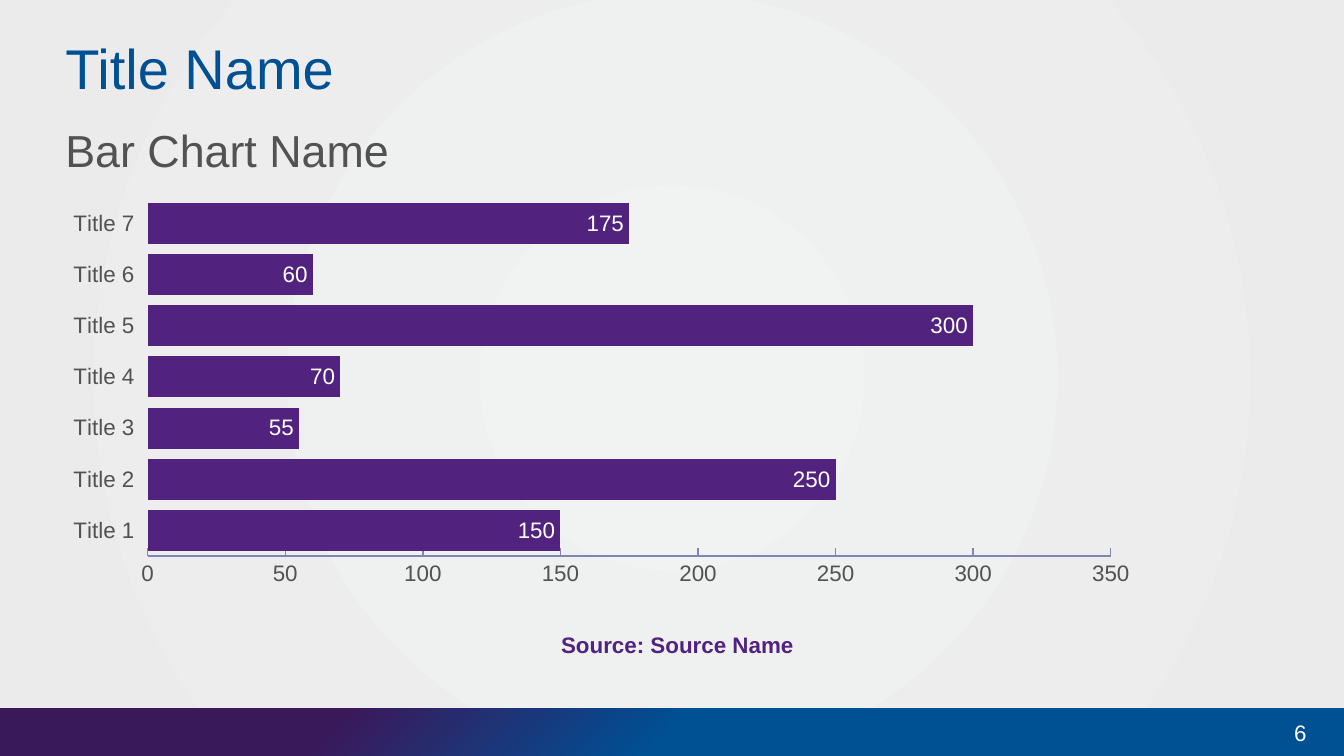
from lxml import etree
from pptx import Presentation
from pptx.chart.data import CategoryChartData
from pptx.dml.color import RGBColor
from pptx.enum.chart import XL_CHART_TYPE, XL_LABEL_POSITION, XL_TICK_MARK
from pptx.enum.shapes import MSO_SHAPE
from pptx.enum.text import MSO_ANCHOR, PP_ALIGN
from pptx.oxml.ns import qn
from pptx.util import Pt

FONT = "Arial"
COLORS = {
    "blue": "005094",
    "violet": "3A195B",
    "bar": "51237F",
    "text": "525252",
    "axis": "7F86B5",
    "white": "FFFFFF",
    "center": "F1F2F2",
    "edge": "EBEBEC",
}
VALUES = [150, 250, 55, 70, 300, 60, 175]


def rgb(name):
    return RGBColor.from_string(COLORS[name])


def style_font(font, size, color, bold=False):
    font.name, font.size, font.bold = FONT, Pt(size), bold
    font.color.rgb = rgb(color)


def fill_radial(fill, properties, stops, focus):
    """Apply a circular gradient; focus holds the left, top, right and bottom percentages."""
    fill.gradient()
    gradient = properties.find(qn("a:gradFill"))
    for child in list(gradient):
        gradient.remove(child)
    stop_list = etree.SubElement(gradient, qn("a:gsLst"))
    for position, color in stops:
        stop = etree.SubElement(stop_list, qn("a:gs"), pos=str(position * 1000))
        etree.SubElement(stop, qn("a:srgbClr"), val=COLORS[color])
    circle = etree.SubElement(gradient, qn("a:path"), path="circle")
    sides = {side: str(value * 1000) for side, value in zip("ltrb", focus)}
    etree.SubElement(circle, qn("a:fillToRect"), **sides)


def set_layout(parent, index, settings):
    """Place a chart part by fractions of the chart area."""
    for old in parent.findall(qn("c:layout")):
        parent.remove(old)
    layout = etree.Element(qn("c:layout"))
    manual = etree.SubElement(layout, qn("c:manualLayout"))
    for name, value in settings.items():
        etree.SubElement(manual, qn(f"c:{name}"), val=str(value))
    parent.insert(index, layout)


def write_text(shape, text, size, color, anchor, insets, align=PP_ALIGN.LEFT):
    frame = shape.text_frame
    frame.word_wrap = True
    frame.vertical_anchor = anchor
    frame.margin_left, frame.margin_top, frame.margin_right, frame.margin_bottom = map(Pt, insets)
    frame.text = text
    paragraph = frame.paragraphs[0]
    paragraph.alignment = align
    style_font(paragraph.font, size, color)


def add_background(slide):
    fill = slide.background.fill
    properties = slide.element.find(f".//{qn('p:bgPr')}")
    if properties is None:
        fill.solid()
        properties = slide.element.find(f".//{qn('p:bgPr')}")
    fill_radial(fill, properties, [(0, "center"), (100, "edge")], (50, 50, 50, 50))


def add_header(slide, left, top, width):
    title = slide.shapes.title
    title.left, title.top, title.width, title.height = map(Pt, (left, top, width, 40))
    write_text(title, "Title Name", 30, "blue", MSO_ANCHOR.MIDDLE, (0, 0, 0, 3.6))
    subtitle = slide.shapes.add_textbox(Pt(left), Pt(top + 46), Pt(width), Pt(31))
    write_text(subtitle, "Bar Chart Name", 24, "text", MSO_ANCHOR.TOP, (0, 2, 0, 3.6))


def add_bar_chart(slide, left, top, width, height):
    data = CategoryChartData()
    data.categories = [f"Title {number}" for number in range(1, len(VALUES) + 1)]
    data.add_series("Series 1", VALUES)
    chart = slide.shapes.add_chart(
        XL_CHART_TYPE.BAR_STACKED, Pt(left), Pt(top), Pt(width), Pt(height), data
    ).chart
    chart.has_legend = chart.has_title = False
    style_font(chart.font, 12, "text")

    plot = chart.plots[0]
    plot.gap_width, plot.overlap, plot.vary_by_categories = 25, 100, False
    series_fill = plot.series[0].format.fill
    series_fill.solid()
    series_fill.fore_color.rgb = rgb("bar")
    plot.has_data_labels = True
    labels = plot.data_labels
    labels.show_value, labels.position = True, XL_LABEL_POSITION.INSIDE_END
    style_font(labels.font, 12, "white")

    category_axis = chart.category_axis
    category_axis.major_tick_mark = XL_TICK_MARK.OUTSIDE
    category_axis.format.line.fill.background()

    value_axis = chart.value_axis
    value_axis.minimum_scale, value_axis.maximum_scale, value_axis.major_unit = 0, 350, 50
    value_axis.has_major_gridlines = False
    value_axis.major_tick_mark = XL_TICK_MARK.INSIDE
    value_axis.format.line.color.rgb = rgb("axis")
    value_axis.format.line.width = Pt(0.75)
    value_axis.has_title = True
    frame = value_axis.axis_title.text_frame
    frame.text = "Source: Source Name"
    style_font(frame.paragraphs[0].font, 12, "bar", bold=True)

    edges = {"xMode": "edge", "yMode": "edge"}
    set_layout(value_axis.axis_title._element, 1, {**edges, "x": 0.43, "y": 0.92})
    set_layout(
        chart._chartSpace.find(f".//{qn('c:plotArea')}"), 0,
        {"layoutTarget": "inner", **edges, "x": 0.082, "y": 0.042, "w": 0.819, "h": 0.733},
    )


def add_footer(slide, left, top, width, height):
    band = slide.shapes.add_shape(
        MSO_SHAPE.RECTANGLE, Pt(left), Pt(top), Pt(width), Pt(height)
    )
    band.shadow.inherit = False
    band.line.fill.background()
    stops = [(0, "blue"), (50, "blue"), (75, "violet")]
    fill_radial(band.fill, band._element.spPr, stops, (100, 100, 0, 0))
    number = slide.shapes.add_textbox(
        Pt(left + width - 53), Pt(top), Pt(40), Pt(height)
    )
    write_text(number, "6", 12, "white", MSO_ANCHOR.MIDDLE, (7.2, 3.6, 7.2, 3.6), PP_ALIGN.RIGHT)


def main():
    presentation = Presentation()
    presentation.slide_width, presentation.slide_height = Pt(720), Pt(405)
    slide = presentation.slides.add_slide(presentation.slide_layouts[5])
    add_background(slide)
    add_footer(slide, 0, 379.5, 720, 25.5)
    add_header(slide, 35, 18, 657)
    add_bar_chart(slide, 27.5, 95, 630, 262)
    presentation.save("out.pptx")


if __name__ == "__main__":
    main()
